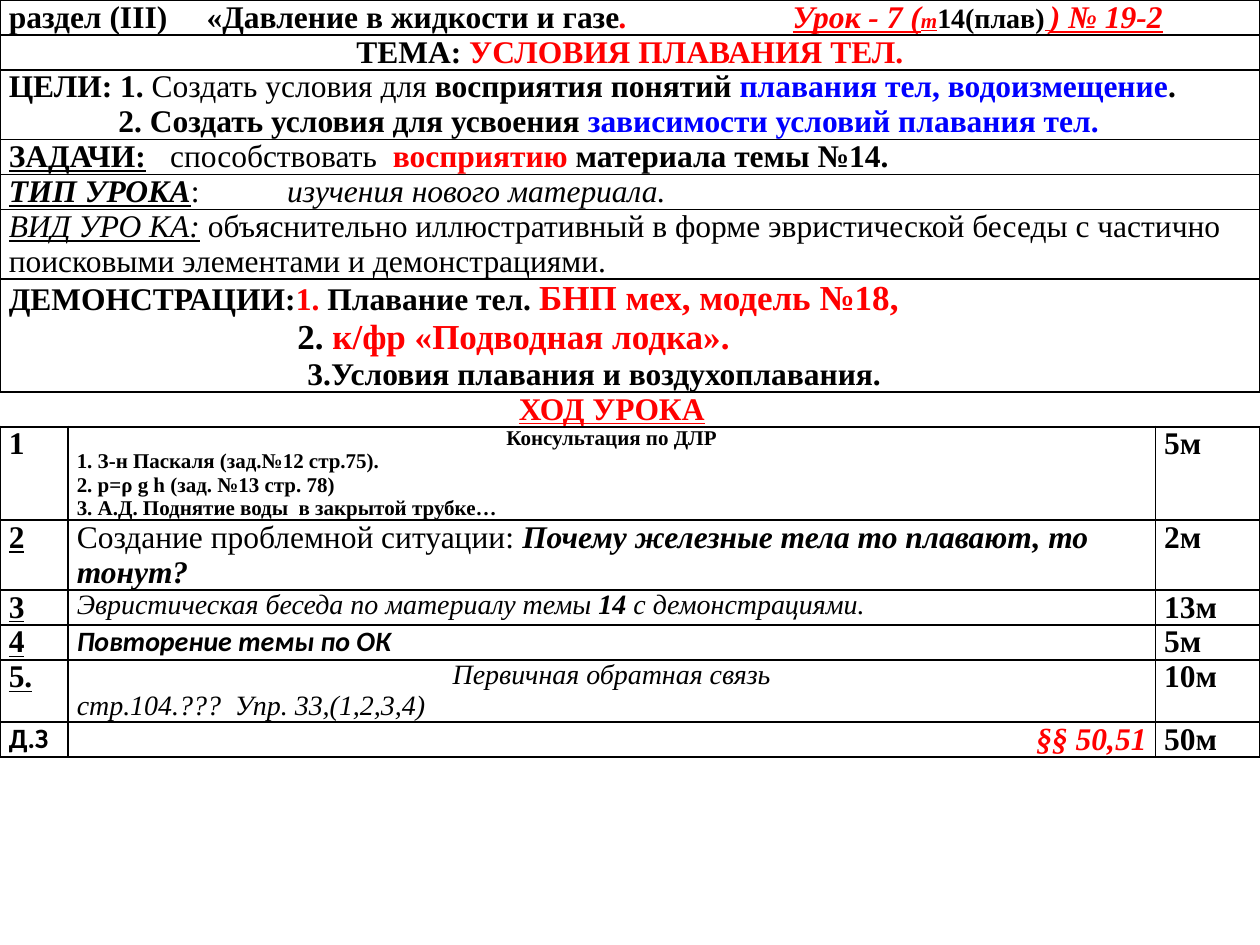
import pptx
import pptx.util
import pptx.dml.color
import pptx.enum.text
from lxml import etree
from pptx.util import Inches, Pt

RGB = pptx.dml.color.RGBColor.from_string
ALIGN = pptx.enum.text.PP_ALIGN
theme = {
    "black": "000000", "red": "FF0000", "blue": "0000FF",
    "serif": "Times New Roman", "sans": "Calibri",
    "small": 12, "mid": 16, "base": 18, "large": 20,
    "thin": 1, "thick": 1.5,
}

# A paragraph is (layout, run, run, ...); a run is (text, flags, size).
# Flags: b bold, i italic, u underline, r red, l blue, s sans.
# Layout: "c" or "r" for alignment, a number for the indent, a list for tab stops.
goals = [
    [([1.57, 6.22], ("раздел (III)\t«Давление в жидкости и газе", "b"), (".\t", "bir"),
      ("Урок - 7 (", "biur"), ("т", "biur", "small"), ("14(плав)", "b", "mid"),
      (" ", "biur", "small"), (") № 19-2", "biur"))],
    [("c", ("ТЕМА:", "b"), (" УСЛОВИЯ ПЛАВАНИЯ ТЕЛ.", "br"))],
    [(0, ("ЦЕЛИ: 1. ", "b"), ("Создать условия для ", ""), ("восприятия понятий ", "b"),
      ("плавания тел, водоизмещение", "bl"), (".", "b")),
     (0.87, ("2. Создать условия для усвоения ", "b"),
      ("зависимости условий плавания тел.", "bl"))],
    [([1.28], ("ЗАДАЧИ:", "bu"), ("\t", "b"), ("способствовать  ", ""),
      ("восприятию", "br"), (" материала темы №14.", "b"))],
    [([2.21], ("ТИП УРОКА", "biu"), (":\t", ""), ("изучения нового материала.", "i"))],
    [(0, ("ВИД УРО КА:", "iu"), (" объяснительно иллюстративный в форме эвристической "
      "беседы с частично поисковыми элементами и демонстрациями.", ""))],
    [(0, ("ДЕМОНСТРАЦИИ:", "b"), ("1. ", "br"), ("Плавание тел. ", "b"),
      ("БНП мех, модель №18,", "br", "large")),
     (2.29, ("2.", "b", "large"), (" к/фр «Подводная лодка».", "br", "large")),
     (2.37, ("3.Условия плавания и воздухоплавания.", "b"))],
]
steps = [
    (("1", "b"), [("c", ("Консультация по ДЛР", "b", "small")),
                  (0, ("1. З-н Паскаля (зад.№12 стр.75).", "b", "small")),
                  (0, ("2. р=ρ g h (зад. №13 стр. 78)", "b", "small")),
                  (0, ("3. А.Д. Поднятие воды  в закрытой трубке…", "b", "small"))], "5м"),
    (("2", "bu"), [(0, ("Создание проблемной ситуации: ", ""),
                    ("Почему железные тела то плавают, то тонут?", "bi"))], "2м"),
    (("3", "bu"), [(0, ("Эвристическая беседа по материалу темы", "i", "mid"),
                    (" 14", "bi", "mid"), (" с демонстрациями.", "i", "mid"))], "13м"),
    (("4", "bu"), [(0, ("Повторение темы по ОК", "bis", "mid"))], "5м"),
    (("5.", "bu"), [("c", ("Первичная обратная связь", "i", "mid")),
                    (0, ("стр.104.???  Упр. 33,(1,2,3,4)", "i", "mid"))], "10м"),
    (("Д.З", "bs", "mid"), [("r", ("§§ 50,51", "bir"))], "50м"),
]
head = [("c", ("ХОД УРОКА", "bur"))]
blank = [(0,)]
rows = [[g, blank, blank] for g in goals] + [[blank, head, blank]]
rows += [[[(0, mark)], body, [(0, (time, "b"))]] for mark, body, time in steps]
split = len(goals)
last = len(rows)
heavy = {1, 2, split - 1, split, split + 1, last - 1, last}
widths = [0.54, 8.63, 0.83]
heights = [0.27, 0.27, 0.55, 0.27, 0.27, 0.55, 0.89, 0.27, 0.73, 0.55, 0.27, 0.27, 0.49, 0.27]


def write(cell, paras):
    frame = cell.text_frame
    for n, (place, *runs) in enumerate(paras):
        para = frame.add_paragraph() if n else frame.paragraphs[0]
        para.font.size = Pt(theme["small"])
        props = para._p.get_or_add_pPr()
        if isinstance(place, str):
            para.alignment = {"c": ALIGN.CENTER, "r": ALIGN.RIGHT}[place]
        elif isinstance(place, list):
            tabs = etree.Element(pptx.oxml.ns.qn("a:tabLst"))
            props.insert(0, tabs)
            for stop in place:
                etree.SubElement(tabs, pptx.oxml.ns.qn("a:tab"), pos=str(Inches(stop)), algn="l")
        elif place:
            props.set("marL", str(Inches(place)))
            props.set("indent", "0")
        for text, flags, *size in runs:
            run = para.add_run()
            run.text = text
            font = run.font
            font.name = theme["sans" if "s" in flags else "serif"]
            font.size = Pt(theme[size[0] if size else "base"])
            font.bold, font.italic, font.underline = ("b" in flags, "i" in flags, "u" in flags)
            tint = "red" if "r" in flags else "blue" if "l" in flags else "black"
            font.color.rgb = RGB(theme[tint])


def edge(cell, side, weight):
    """Draw one cell border; a weight of None leaves the side open."""
    size = Pt(theme[weight]) if weight else 0
    line = etree.SubElement(cell._tc.get_or_add_tcPr(), pptx.oxml.ns.qn("a:ln" + side), w=str(size))
    if weight:
        fill = etree.SubElement(line, pptx.oxml.ns.qn("a:solidFill"))
        etree.SubElement(fill, pptx.oxml.ns.qn("a:srgbClr"), val=theme["black"])
    else:
        etree.SubElement(line, pptx.oxml.ns.qn("a:noFill"))


deck = pptx.Presentation()
deck.slide_width, deck.slide_height = Inches(10), Inches(7.5)
slide = deck.slides.add_slide(deck.slide_layouts[6])
frame = slide.shapes.add_table(last, 3, 0, 0, Inches(10), Inches(sum(heights)))
table = frame.table
table.first_row = table.horz_banding = False
for col, width in zip(table.columns, widths):
    col.width = Inches(width)

for r, (row, height) in enumerate(zip(rows, heights)):
    table.rows[r].height = Inches(height)
    if r < split:
        table.cell(r, 0).merge(table.cell(r, 2))
    for c, paras in enumerate(row):
        cell = table.cell(r, c)
        cell.margin_left = cell.margin_right = Inches(0.07)
        cell.margin_top = cell.margin_bottom = 0
        left = right = "thin"
        if r == split:
            left = right = None
        elif r > split:
            left = "thick" if c < 2 and (c, r) != (1, last - 1) else "thin"
            right = "thick" if c == 0 and r < last - 1 or (c, r) == (2, last - 1) else "thin"
        elif r in (1, split - 1):
            left = right = "thick"
        edge(cell, "L", left)
        edge(cell, "R", right)
        edge(cell, "T", "thick" if r in heavy else "thin")
        edge(cell, "B", "thick" if r + 1 in heavy else "thin")
        cell.fill.background()
        if not cell.is_spanned:
            write(cell, paras)

deck.save("out.pptx")
